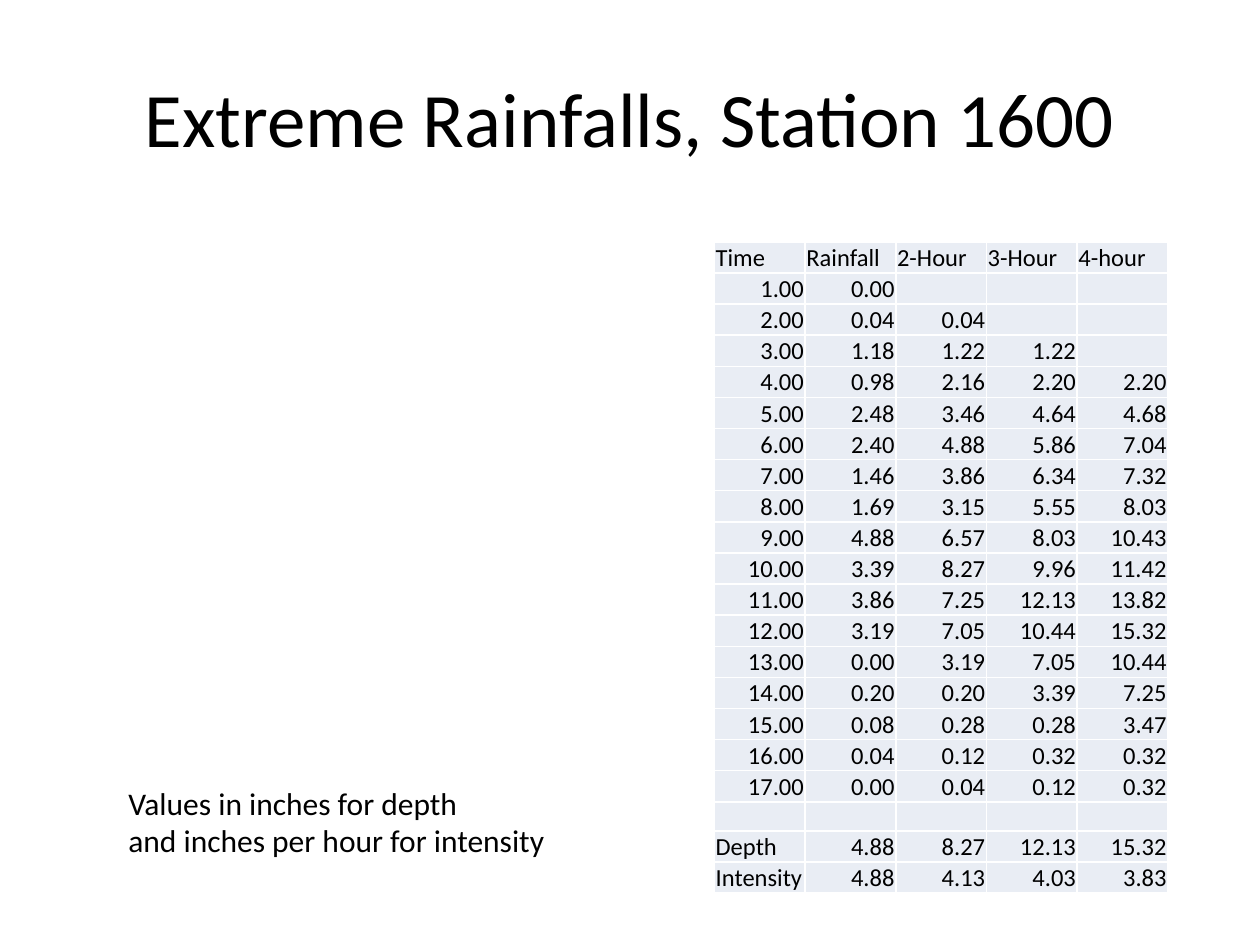
"""Build the slide of extreme rainfall depths and intensities at one station."""
from lxml.etree import SubElement
from pptx import Presentation
from pptx.dml.color import RGBColor
from pptx.enum.text import MSO_ANCHOR as Anchor, PP_ALIGN as Align
from pptx.oxml.ns import qn
from pptx.util import Inches, Pt

TITLE = "Extreme Rainfalls, Station 1600"
NOTE = ["Values in inches for depth", "and inches per hour for intensity"]
HEADERS = ["Time", "Rainfall", "2-Hour", "3-Hour", "4-hour"]
RAINFALL = [0.00, 0.04, 1.18, 0.98, 2.48, 2.40, 1.46, 1.69, 4.88,
            3.39, 3.86, 3.19, 0.00, 0.20, 0.08, 0.04, 0.00]
SUMMARY = [
    ["Depth", "4.88", "8.27", "12.13", "15.32"],
    ["Intensity", "4.88", "4.13", "4.03", "3.83"],
]
DURATIONS = [1, 2, 3, 4]

BLACK = RGBColor(0x00, 0x00, 0x00)
PALE_BLUE = RGBColor(0xE9, 0xED, 0xF4)
FONT = "Calibri"
WIDTH, HEIGHT = Inches(10), Inches(7.5)
COLUMN_WIDTH, ROW_HEIGHT = Inches(0.72), Inches(0.2)
TABLE_HEIGHT = Inches(5.12)
CELL_FORMAT = {
    "margin_left": Inches(0.01), "margin_right": Inches(0.01),
    "margin_top": Inches(0.01), "margin_bottom": 0,
    "vertical_anchor": Anchor.BOTTOM,
}


def set_attributes(target, values):
    for name, value in values.items():
        setattr(target, name, value)


def write(paragraph, text, size, alignment):
    paragraph.alignment = alignment
    run = paragraph.add_run()
    run.text = text
    set_attributes(run.font, {"name": FONT, "size": Pt(size)})
    run.font.color.rgb = BLACK


def rainfall_rows():
    rows = []
    for hour in range(1, len(RAINFALL) + 1):
        totals = [f"{sum(RAINFALL[hour - span:hour]):.2f}" if hour >= span else ""
                  for span in DURATIONS]
        rows.append([f"{hour:.2f}", *totals])
    return rows


def add_title(slide):
    title = slide.shapes.title
    set_attributes(title, {"left": int(WIDTH * 0.05), "top": int(HEIGHT * 0.04),
                           "width": int(WIDTH * 0.9), "height": Inches(1.25)})
    title.text_frame.vertical_anchor = Anchor.MIDDLE
    write(title.text_frame.paragraphs[0], TITLE, 44, Align.CENTER)


def add_rainfall_table(slide):
    rows = [HEADERS, *rainfall_rows(), [""] * len(HEADERS), *SUMMARY]
    frame = slide.shapes.add_table(
        len(rows), len(HEADERS), Inches(5.67), Inches(1.92),
        COLUMN_WIDTH * len(HEADERS), TABLE_HEIGHT)
    table = frame.table
    set_attributes(table, {"first_row": False, "horz_banding": False})
    for column in table.columns:
        column.width = COLUMN_WIDTH
    for row, texts in zip(table.rows, rows):
        row.height = ROW_HEIGHT
        for cell, text in zip(row.cells, texts):
            set_attributes(cell, CELL_FORMAT)
            cell.fill.solid()
            cell.fill.fore_color.rgb = PALE_BLUE
            paragraph = cell.text_frame.paragraphs[0]
            if text:
                numeric = text[0].isdigit() and row is not table.rows[0] and texts is not HEADERS
                write(paragraph, text, 14, Align.RIGHT if numeric else Align.LEFT)
            else:
                SubElement(paragraph._p, qn("a:endParaRPr"), sz="1300")
    frame.height = TABLE_HEIGHT


def add_note(slide):
    box = slide.shapes.add_textbox(Inches(0.92), Inches(6.17), Inches(3.55), Inches(0.71))
    frame = box.text_frame
    frame.word_wrap = False
    for index, line in enumerate(NOTE):
        paragraph = frame.add_paragraph() if index else frame.paragraphs[0]
        write(paragraph, line, 18, Align.LEFT)


def main():
    presentation = Presentation()
    set_attributes(presentation, {"slide_width": WIDTH, "slide_height": HEIGHT})
    slide = presentation.slides.add_slide(presentation.slide_layouts[5])
    add_title(slide)
    add_rainfall_table(slide)
    add_note(slide)
    presentation.save("out.pptx")


if __name__ == "__main__":
    main()
